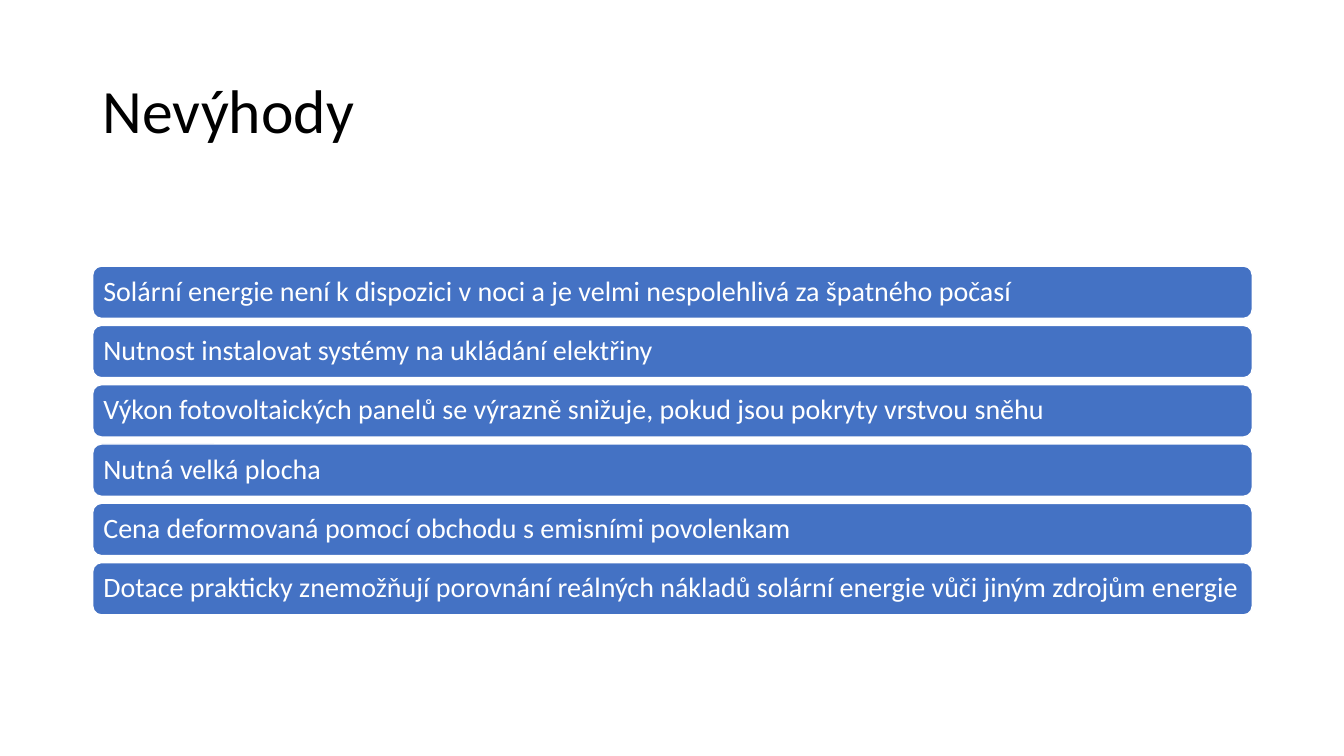
from pptx import Presentation
from pptx.dml.color import RGBColor
from pptx.enum.shapes import MSO_SHAPE
from pptx.enum.text import MSO_ANCHOR, PP_ALIGN
from pptx.util import Inches, Pt

COLORS = {"text": "000000", "bar": "4472C4", "white": "FFFFFF"}
FONT = "Calibri"
DRAWBACKS = [
    "Solární energie není k dispozici v noci a je velmi nespolehlivá za špatného počasí",
    "Nutnost instalovat systémy na ukládání elektřiny",
    "Výkon fotovoltaických panelů se výrazně snižuje, pokud jsou pokryty vrstvou sněhu",
    "Nutná velká plocha",
    "Cena deformovaná pomocí obchodu s emisními povolenkam",
    "Dotace prakticky znemožňují porovnání reálných nákladů solární energie vůči jiným zdrojům energie",
]


def rgb(name):
    return RGBColor.from_string(COLORS[name])


def write(tf, text, *, size, color, insets=(0.1, 0.05, 0.1, 0.05)):
    """Fill a text frame with one left-aligned, vertically centred paragraph."""
    tf.word_wrap = True
    tf.vertical_anchor = MSO_ANCHOR.MIDDLE
    tf.margin_left, tf.margin_top, tf.margin_right, tf.margin_bottom = map(Inches, insets)
    p = tf.paragraphs[0]
    p.alignment = PP_ALIGN.LEFT
    p.line_spacing = 0.9
    r = p.add_run()
    r.text = text
    r.font.name = FONT
    r.font.size = Pt(size)
    r.font.color.rgb = rgb(color)


class ListSlide:
    """One title above a single-column grid of bars."""

    left, width = 0.92, 11.5
    list_top, list_height, gap = 2.64, 3.46, 0.07

    def __init__(self, prs):
        self.s = prs.slides.add_slide(prs.slide_layouts[5])

    def box(self, top, height):
        return [Inches(v) for v in (self.left, top, self.width, height)]

    def title(self, text):
        sp = self.s.shapes.title
        sp.left, sp.top, sp.width, sp.height = self.box(0.4, 1.45)
        write(sp.text_frame, text, size=44, color="text")

    def bar(self, text, row, rows):
        height = (self.list_height - (rows - 1) * self.gap) / rows
        top = self.list_top + row * (height + self.gap)
        sp = self.s.shapes.add_shape(MSO_SHAPE.ROUNDED_RECTANGLE, *self.box(top, height))
        sp.shadow.inherit = False
        sp.fill.solid()
        sp.fill.fore_color.rgb = rgb("bar")
        sp.line.color.rgb = rgb("white")
        sp.line.width = Pt(1)
        write(sp.text_frame, text, size=20, color="white", insets=(0.08, 0.05, 0.04, 0.05))


def main():
    prs = Presentation()
    prs.slide_width, prs.slide_height = Inches(13.33), Inches(7.5)
    slide = ListSlide(prs)
    slide.title("Nevýhody")
    for row, text in enumerate(DRAWBACKS):
        slide.bar(text, row, len(DRAWBACKS))
    prs.save("out.pptx")


if __name__ == "__main__":
    main()
